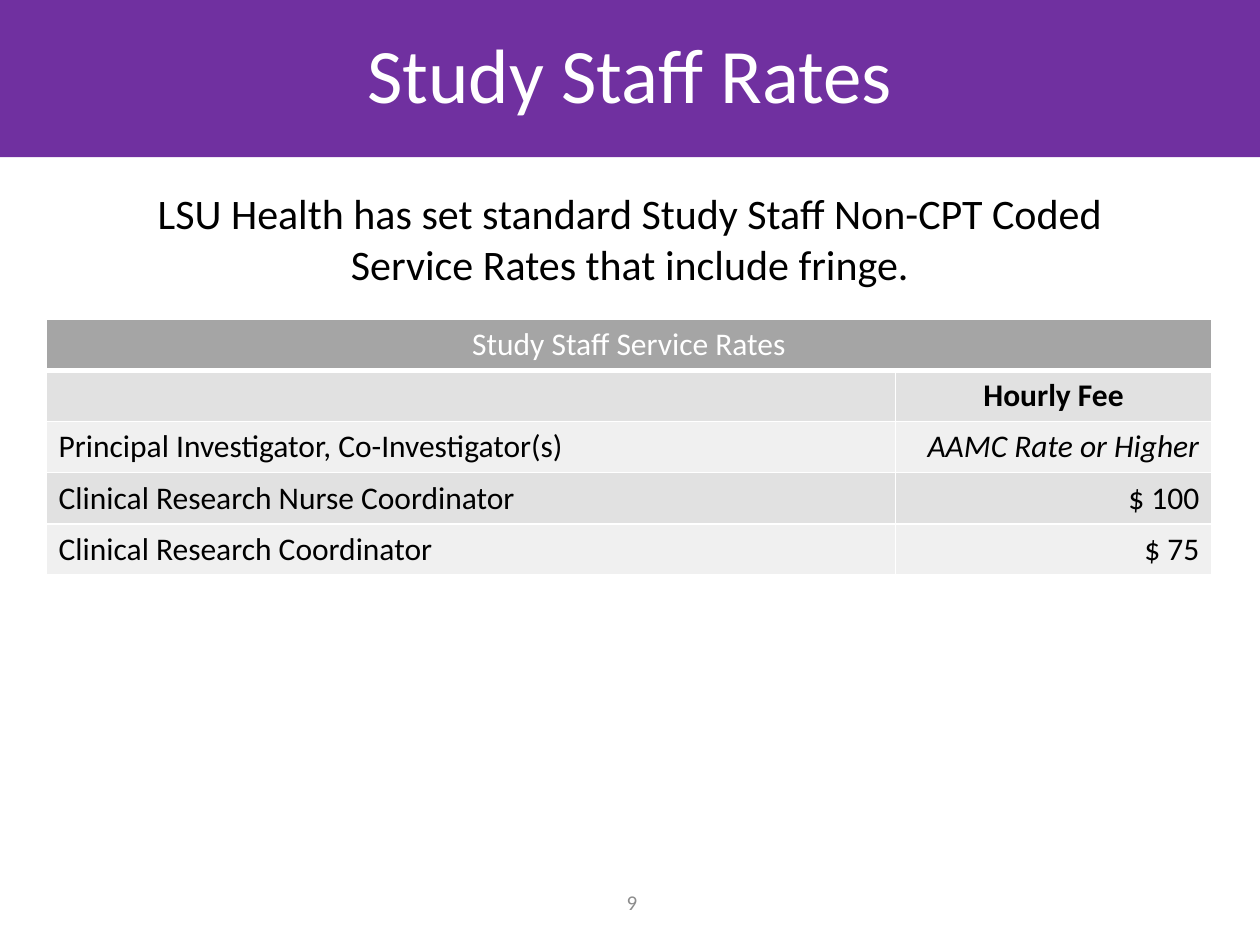
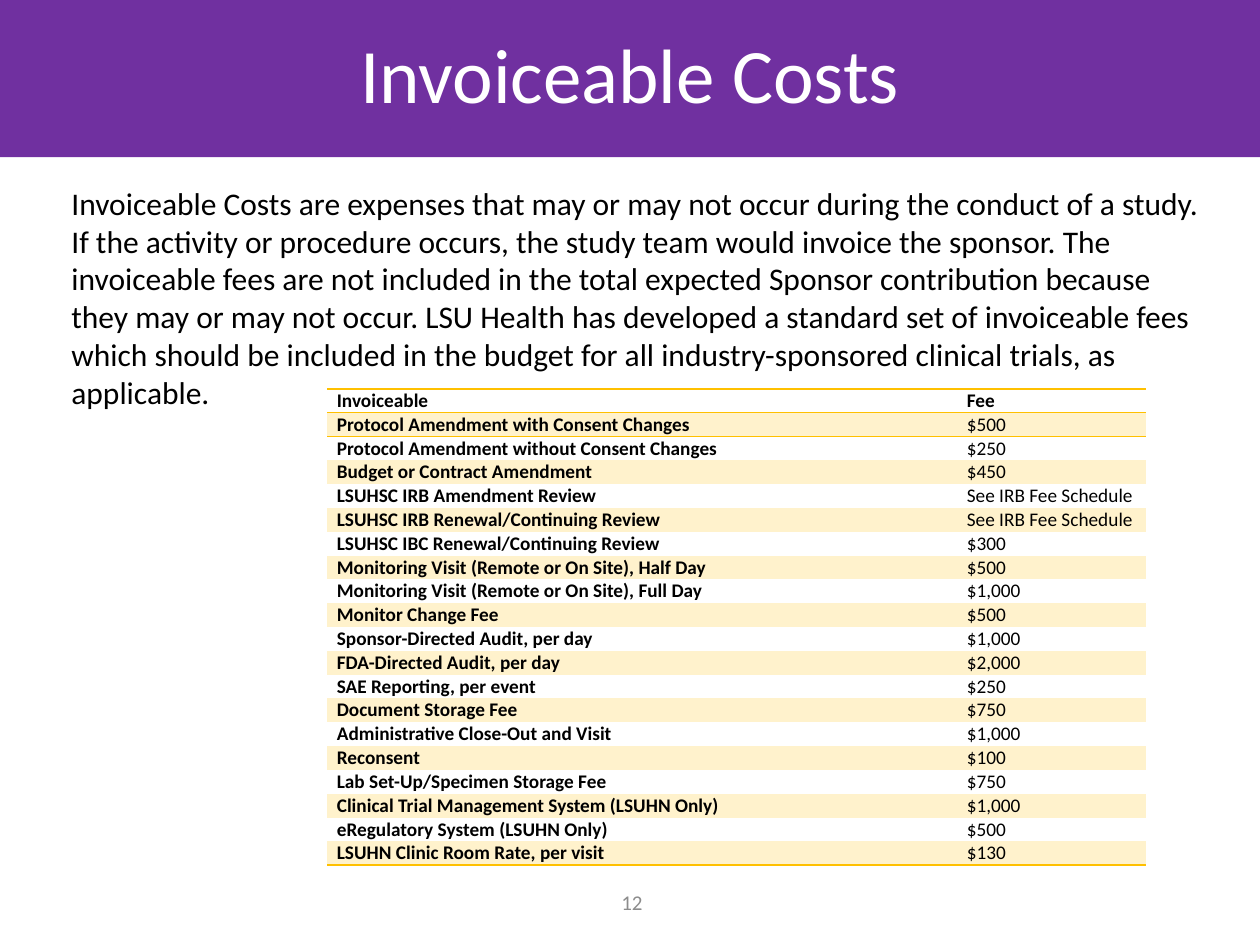
from lxml import etree
from pptx import Presentation
from pptx.dml.color import RGBColor
from pptx.enum.text import MSO_ANCHOR, PP_ALIGN
from pptx.oxml.ns import qn
from pptx.util import Cm, Pt

LEFT, CENTER, RIGHT = PP_ALIGN.LEFT, PP_ALIGN.CENTER, PP_ALIGN.RIGHT
MIDDLE = MSO_ANCHOR.MIDDLE
FONT = "Calibri"
PURPLE, WHITE, BLACK, PAGE_GRAY = "7030A0", "FFFFFF", "000000", "8C8C8C"
HEADER_GRAY, DARK_BAND, LIGHT_BAND = "A5A5A5", "E1E1E1", "F0F0F0"
GOLD, PALE_GOLD = "FFC000", "FFF2CC"
PLAIN_TABLE = "{2D5ABB26-0587-4C30-8999-92F81FD0307C}"


def write(frame, text, size, color, align=LEFT, bold=False, italic=False):
    frame.text = text
    para = frame.paragraphs[0]
    para.alignment = align
    for span in para.runs:
        span.font.name = FONT
        span.font.size = Pt(size)
        span.font.bold = bold
        span.font.italic = italic
        span.font.color.rgb = RGBColor.from_string(color)
    return para


def style_cell(cell, fill, borders):
    properties = cell._tc.get_or_add_tcPr()
    for side, (color, width) in borders.items():
        line = etree.SubElement(properties, qn(f"a:ln{side}"), w=str(Pt(width)))
        solid = etree.SubElement(line, qn("a:solidFill"))
        etree.SubElement(solid, qn("a:srgbClr"), val=color)
    if fill:
        cell.fill.solid()
        cell.fill.fore_color.rgb = RGBColor.from_string(fill)
    else:
        cell.fill.background()


staff_rates = [
    ("Study Staff Service Rates", ""),
    ("", "Hourly Fee"),
    ("Principal Investigator, Co-Investigator(s)", "AAMC Rate or Higher"),
    ("Clinical Research Nurse Coordinator", "$ 100"),
    ("Clinical Research Coordinator", "$ 75"),
]
invoiceables = [
    ("Invoiceable", "Fee"),
    ("Protocol Amendment with Consent Changes", "$500"),
    ("Protocol Amendment without Consent Changes", "$250"),
    ("Budget or Contract Amendment", "$450"),
    ("LSUHSC IRB Amendment Review", "See IRB Fee Schedule"),
    ("LSUHSC IRB Renewal/Continuing Review", "See IRB Fee Schedule"),
    ("LSUHSC IBC Renewal/Continuing Review", "$300"),
    ("Monitoring Visit (Remote or On Site), Half Day", "$500"),
    ("Monitoring Visit (Remote or On Site), Full Day", "$1,000"),
    ("Monitor Change Fee", "$500"),
    ("Sponsor-Directed Audit, per day", "$1,000"),
    ("FDA-Directed Audit, per day", "$2,000"),
    ("SAE Reporting, per event", "$250"),
    ("Document Storage Fee", "$750"),
    ("Administrative Close-Out and Visit", "$1,000"),
    ("Reconsent", "$100"),
    ("Lab Set-Up/Specimen Storage Fee", "$750"),
    ("Clinical Trial Management System (LSUHN Only)", "$1,000"),
    ("eRegulatory System (LSUHN Only)", "$500"),
    ("LSUHN Clinic Room Rate, per visit", "$130"),
]
rates_intro = (
    "LSU Health has set standard Study Staff Non-CPT Coded Service Rates "
    "that include fringe."
)
costs_intro = (
    "Invoiceable Costs are expenses that may or may not occur during the conduct "
    "of a study. If the activity or procedure occurs, the study team would invoice "
    "the sponsor. The invoiceable fees are not included in the total expected "
    "Sponsor contribution because they may or may not occur. LSU Health has "
    "developed a standard set of invoiceable fees which should be included in the "
    "budget for all industry-sponsored clinical trials, as applicable."
)
slides = [
    ("Study Staff Rates", "9", staff_rates, (0.93, 6.44), (17.12, 6.38), 1.03,
     rates_intro, (2.12, 3.66, 21.16, 2.31), 24, CENTER),
    ("Invoiceable Costs", "12", invoiceables, (6.6, 7.84), (12.7, 3.8), 0.48,
     costs_intro, (1.19, 3.58, 23.27, 4.88), 18, LEFT),
]

deck = Presentation()
deck.slide_width, deck.slide_height = Cm(25.4), Cm(19.05)
tables = []

for (title_text, number, rows, corner, widths, row_height,
     intro, intro_place, intro_size, intro_align) in slides:
    page = deck.slides.add_slide(deck.slide_layouts[5])

    title = page.shapes.title
    title.left, title.top, title.width, title.height = 0, 0, Cm(25.4), Cm(3.17)
    title.fill.solid()
    title.fill.fore_color.rgb = RGBColor.from_string(PURPLE)
    title.text_frame.vertical_anchor = MIDDLE
    write(title.text_frame, title_text, 44, WHITE, CENTER).line_spacing = 0.9

    number_box = page.shapes.add_textbox(Cm(11.89), Cm(17.68), Cm(1.7), Cm(1.02))
    number_box.text_frame.word_wrap = True
    number_box.text_frame.vertical_anchor = MIDDLE
    write(number_box.text_frame, number, 12, PAGE_GRAY, CENTER)

    frame = page.shapes.add_table(
        len(rows), 2, Cm(corner[0]), Cm(corner[1]),
        Cm(sum(widths)), Cm(row_height * len(rows)))
    table = frame.table
    table._tbl.tblPr.find(qn("a:tableStyleId")).text = PLAIN_TABLE
    for column, width in zip(table.columns, widths):
        column.width = Cm(width)
    for row in table.rows:
        row.height = Cm(row_height)
    tables.append(table)

    intro_box = page.shapes.add_textbox(*(Cm(length) for length in intro_place))
    intro_box.text_frame.word_wrap = True
    write(intro_box.text_frame, intro, intro_size, BLACK, intro_align)

rates_table, costs_table = tables

rates_table.cell(0, 0).merge(rates_table.cell(0, 1))
for row_index, texts in enumerate(staff_rates):
    header = row_index == 0
    band = HEADER_GRAY if header else DARK_BAND if row_index % 2 else LIGHT_BAND
    borders = {side: (WHITE, 1) for side in "LRTB"}
    if header:
        borders["B"] = (WHITE, 3)
    elif row_index == 1:
        borders["T"] = (WHITE, 3)
    for column_index, text in enumerate(texts):
        cell = rates_table.cell(row_index, column_index)
        style_cell(cell, band, borders)
        if text:
            align = CENTER if row_index < 2 else RIGHT if column_index else LEFT
            write(cell.text_frame, text, 18, WHITE if header else BLACK, align,
                  bold=row_index == 1, italic=row_index == 2 and column_index == 1)

last_row = len(invoiceables) - 1
for row_index, texts in enumerate(invoiceables):
    borders = {}
    if row_index < 2:
        borders["T"] = (GOLD, 1)
    if row_index in (0, last_row):
        borders["B"] = (GOLD, 1)
    for column_index, text in enumerate(texts):
        cell = costs_table.cell(row_index, column_index)
        cell.margin_left = cell.margin_right = Cm(0.19)
        cell.margin_top = cell.margin_bottom = 0
        style_cell(cell, PALE_GOLD if row_index % 2 else None, borders)
        write(cell.text_frame, text, 11, BLACK,
              bold=row_index == 0 or column_index == 0)

deck.save("out.pptx")
